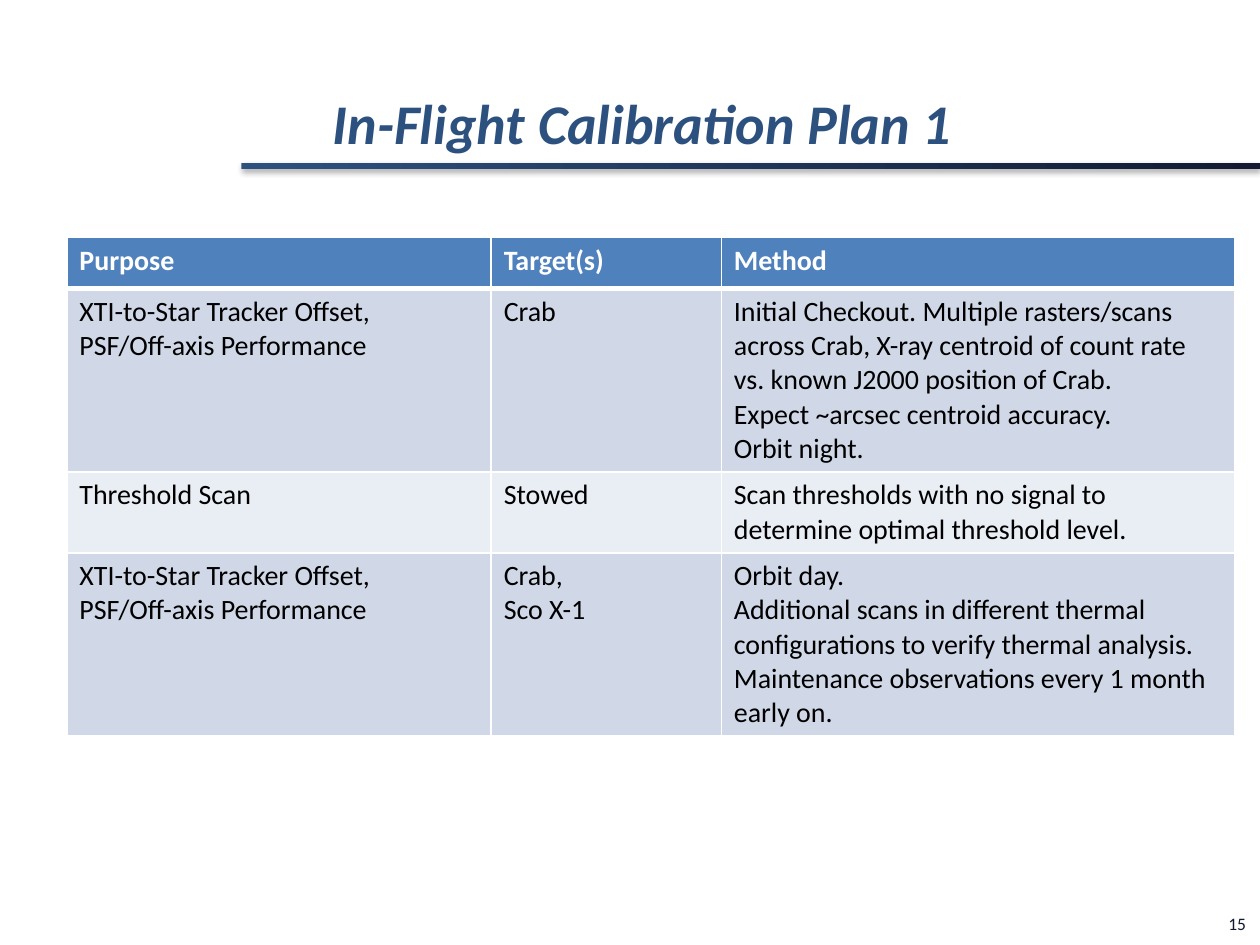
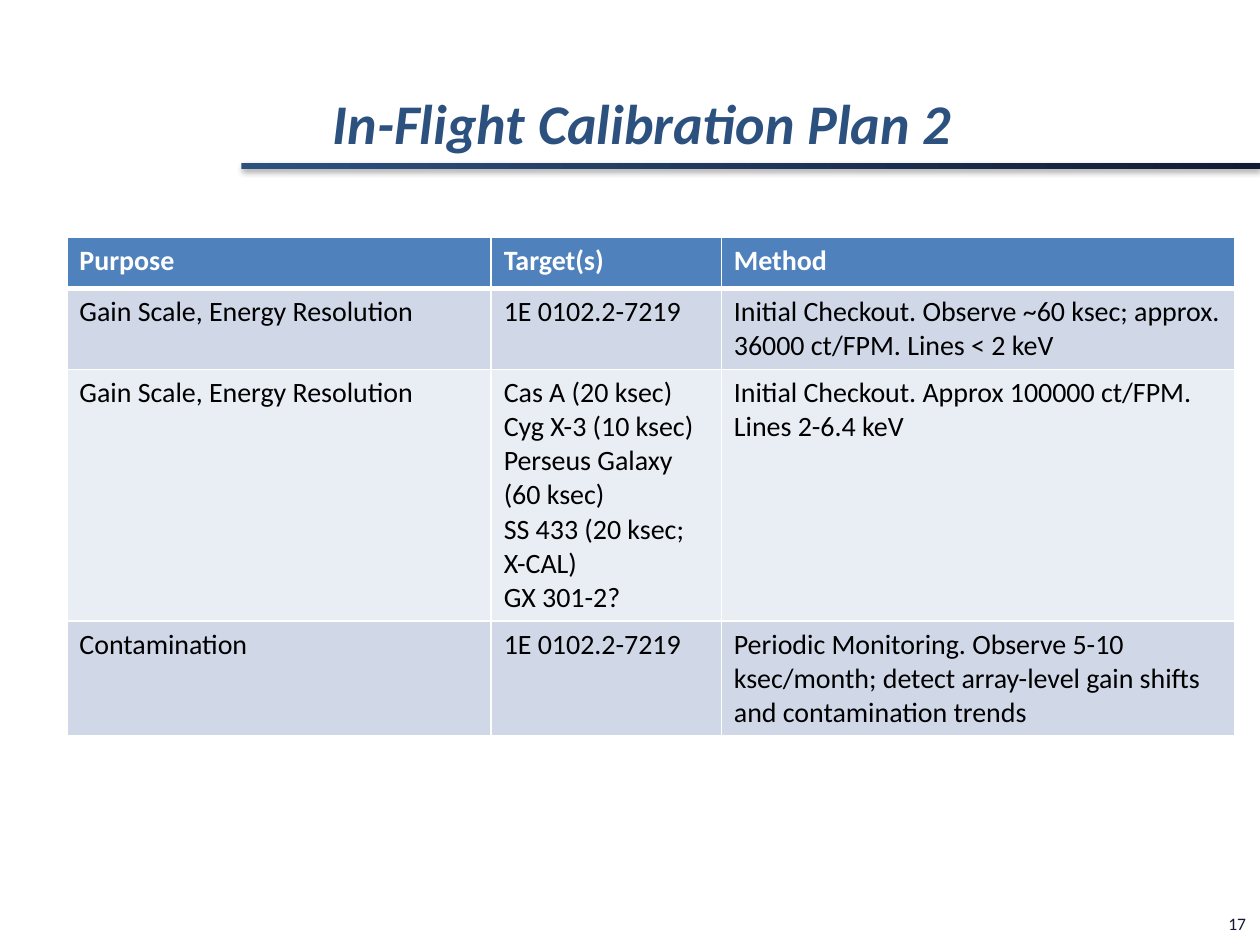
from dataclasses import dataclass

from lxml import etree
from pptx import Presentation
from pptx.dml.color import RGBColor
from pptx.enum.shapes import MSO_SHAPE
from pptx.enum.text import MSO_ANCHOR, MSO_AUTO_SIZE, PP_ALIGN
from pptx.oxml.ns import qn
from pptx.util import Pt

RECTANGLE = MSO_SHAPE.RECTANGLE
LEFT = PP_ALIGN.LEFT
BOTTOM = MSO_ANCHOR.BOTTOM
NO_AUTOFIT = MSO_AUTO_SIZE.NONE
GROW_TO_TEXT = MSO_AUTO_SIZE.SHAPE_TO_FIT_TEXT
TITLE_ONLY = 5


@dataclass(frozen=True)
class Theme:
    font: str = "Calibri"
    blue: str = "2D517F"
    navy: str = "121A33"
    header: str = "4F81BD"
    bands: tuple = ("D0D8E8", "E9EDF4")
    white: str = "FFFFFF"
    black: str = "000000"
    title_size: int = 32
    table_size: int = 16
    number_size: int = 10


THEME = Theme()
SLIDE_WIDTH, SLIDE_HEIGHT = 720, 540
COLUMN_WIDTHS = (242.5, 131.5, 293.5)
HEADINGS = ("Purpose", "Target(s)", "Method")
HEADER_HEIGHT = 29.2
LINE_HEIGHT = 19.53
CELL_PADDING = 7.2

TRACKER_OFFSET = "XTI-to-Star Tracker Offset,\nPSF/Off-axis Performance"
GAIN_SCALE = "Gain Scale, Energy Resolution"
REMNANT = "1E 0102.2-7219"

PLANS = (
    ("In-Flight Calibration Plan 1", 15, (
        (5, TRACKER_OFFSET, "Crab",
         "Initial Checkout. Multiple rasters/scans across Crab, X-ray centroid "
         "of count rate vs. known J2000 position of Crab.\n"
         "Expect ~arcsec centroid accuracy.\nOrbit night."),
        (2, "Threshold Scan", "Stowed",
         "Scan thresholds with no signal to determine optimal threshold level."),
        (5, TRACKER_OFFSET, "Crab,\nSco X-1",
         "Orbit day.\nAdditional scans in different thermal configurations "
         "to verify thermal analysis.\n"
         "Maintenance observations every 1 month early on."),
    )),
    ("In-Flight Calibration Plan 2", 17, (
        (2, GAIN_SCALE, REMNANT,
         "Initial Checkout. Observe ~60 ksec; approx. 36000 ct/FPM. Lines < 2 keV"),
        (7, GAIN_SCALE,
         "Cas A (20 ksec)\nCyg X-3 (10 ksec)\nPerseus Galaxy (60 ksec)\n"
         "SS 433 (20 ksec; X-CAL)\nGX 301-2?",
         "Initial Checkout. Approx 100000 ct/FPM. Lines 2-6.4 keV"),
        (3, "Contamination", REMNANT,
         "Periodic Monitoring. Observe 5-10 ksec/month; detect array-level "
         "gain shifts and contamination trends"),
    )),
)


def rgb(color):
    return RGBColor.from_string(color)


def fill_solid(fill, color):
    fill.solid()
    fill.fore_color.rgb = rgb(color)


def fill_gradient(fill):
    fill.gradient()
    fill.gradient_angle = 0
    for stop, color in zip(fill.gradient_stops, (THEME.blue, THEME.navy)):
        stop.color.rgb = rgb(color)


def write_text(frame, text, *, size, color=None, bold=False, italic=False):
    frame.text = text
    for paragraph in frame.paragraphs:
        paragraph.alignment = LEFT
        for run in paragraph.runs:
            font = run.font
            font.name, font.size = THEME.font, Pt(size)
            font.bold, font.italic = bold, italic
            if color:
                fill_solid(font.fill, color)
            else:
                fill_gradient(font.fill)


def add_title(slide, text):
    title = slide.shapes.title
    title.left, title.top, title.width, title.height = map(Pt, (182.9, 42.5, 501, 50.4))
    frame = title.text_frame
    frame.word_wrap = True
    frame.auto_size = NO_AUTOFIT
    frame.vertical_anchor = BOTTOM
    write_text(frame, text, size=THEME.title_size, bold=True, italic=True)


def add_title_rule(slide):
    left = 138
    rule = slide.shapes.add_shape(
        RECTANGLE, Pt(left), Pt(93), Pt(SLIDE_WIDTH - left), Pt(3.6))
    fill_gradient(rule.fill)
    rule.line.fill.background()
    rule.shadow.inherit = False
    effects = rule.element.spPr.find(qn("a:effectLst"))
    shadow = etree.SubElement(
        effects, qn("a:outerShdw"), blurRad=str(Pt(3.1)), dist=str(Pt(1.8)),
        dir="5400000", rotWithShape="0")
    shade = etree.SubElement(shadow, qn("a:srgbClr"), val=THEME.black)
    etree.SubElement(shade, qn("a:alpha"), val="35000")


def add_page_number(slide, number):
    box = slide.shapes.add_textbox(Pt(694.8), Pt(518.4), Pt(26.6), Pt(19.4))
    frame = box.text_frame
    frame.word_wrap = False
    frame.auto_size = GROW_TO_TEXT
    write_text(frame, str(number), size=THEME.number_size, color=THEME.navy)


def set_borders(cell, bottom):
    properties = cell._tc.get_or_add_tcPr()
    for side, width in (("L", 1), ("R", 1), ("T", 1), ("B", bottom)):
        line = etree.SubElement(properties, qn(f"a:ln{side}"), w=str(Pt(width)))
        paint = etree.SubElement(line, qn("a:solidFill"))
        etree.SubElement(paint, qn("a:srgbClr"), val=THEME.white)


def fill_row(row, texts, *, background, color, bold=False, bottom=1):
    for cell, text in zip(row.cells, texts):
        set_borders(cell, bottom)
        fill_solid(cell.fill, background)
        write_text(cell.text_frame, text, size=THEME.table_size, color=color, bold=bold)


def add_plan_table(slide, observations):
    heights = [HEADER_HEIGHT] + [
        lines * LINE_HEIGHT + CELL_PADDING for lines, *_ in observations]
    table = slide.shapes.add_table(
        len(heights), len(HEADINGS), Pt(38.2), Pt(135.6),
        Pt(sum(COLUMN_WIDTHS)), Pt(sum(heights))).table
    table.horz_banding = False
    for column, width in zip(table.columns, COLUMN_WIDTHS):
        column.width = Pt(width)
    for row, height in zip(table.rows, heights):
        row.height = Pt(height)
    fill_row(table.rows[0], HEADINGS, background=THEME.header,
             color=THEME.white, bold=True, bottom=3)
    for index, (_, *texts) in enumerate(observations):
        fill_row(table.rows[index + 1], texts,
                 background=THEME.bands[index % 2], color=THEME.black)


def main():
    deck = Presentation()
    deck.slide_width, deck.slide_height = Pt(SLIDE_WIDTH), Pt(SLIDE_HEIGHT)
    for title, number, observations in PLANS:
        slide = deck.slides.add_slide(deck.slide_layouts[TITLE_ONLY])
        add_page_number(slide, number)
        add_title_rule(slide)
        add_title(slide, title)
        add_plan_table(slide, observations)
    deck.save("out.pptx")


if __name__ == "__main__":
    main()
